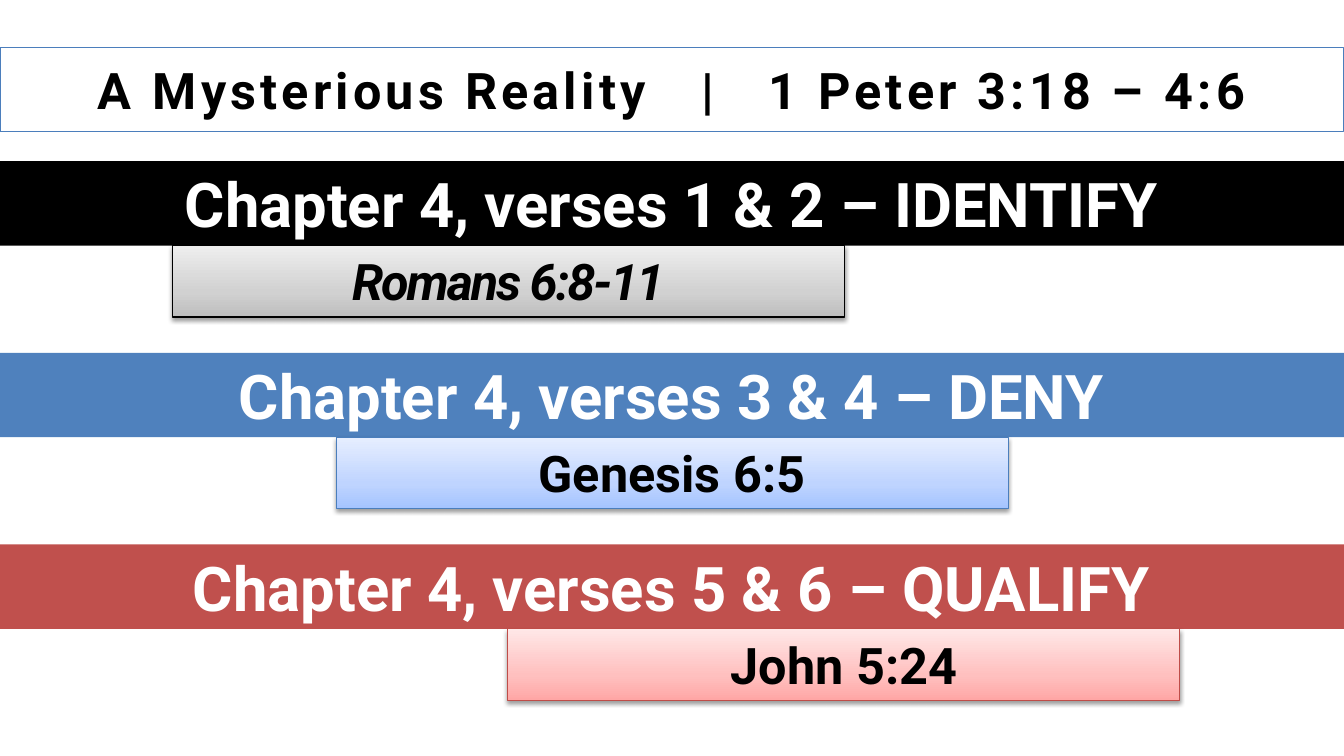
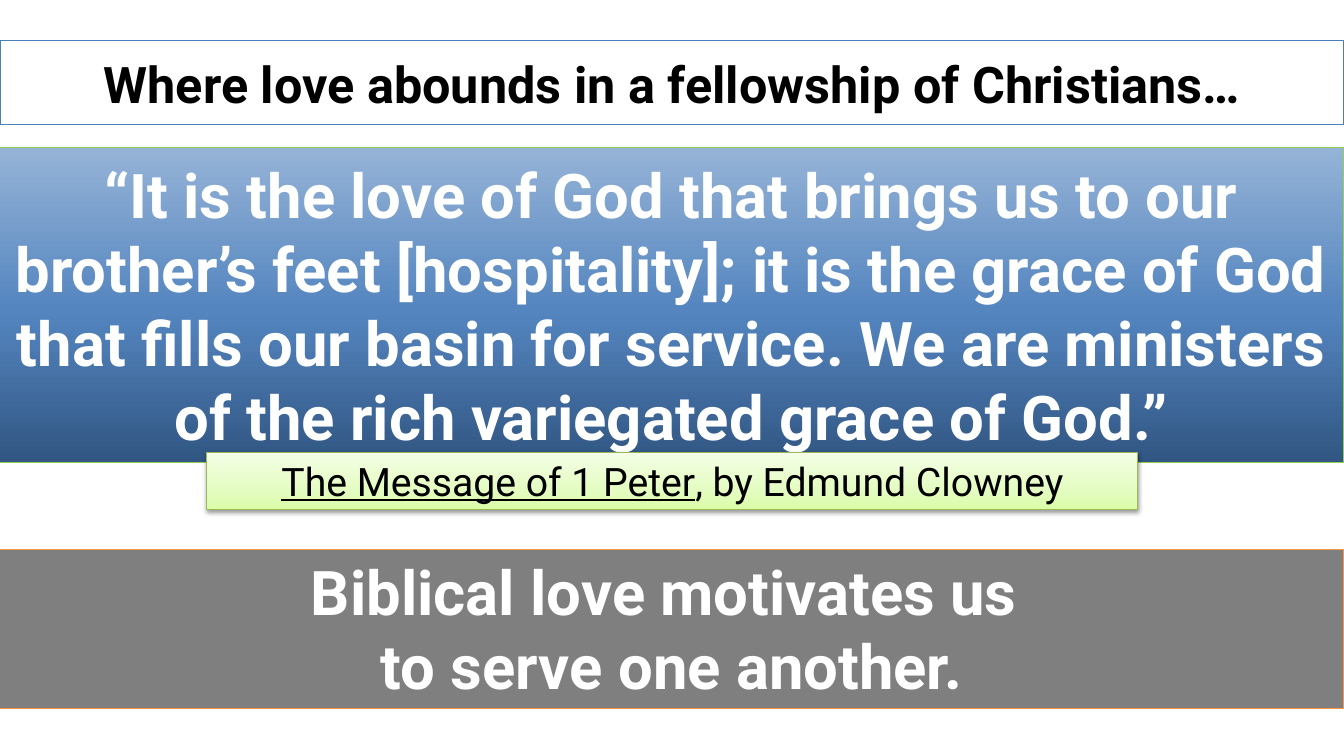
from lxml import etree
from pptx import Presentation
from pptx import util as u
from pptx.dml.color import RGBColor
from pptx.enum import shapes, text
from pptx.oxml import ns

COLORS = {
    "black": "000000", "white": "FFFFFF", "blue": "4F81BD", "red": "C0504D",
    "blue line": "4B7EBC", "red line": "BF4C48", "green line": "98B955",
    "lime": "92D050", "orange": "F79646",
}
GRADIENTS = {
    "gray": [(0, "BDBDBD"), (35, "D1D1D1"), (100, "EEEEEE")],
    "pale blue": [(0, "A4C4FF"), (35, "BFD4FF"), (100, "E6EEFF")],
    "pink": [(0, "FFA6A5"), (35, "FFC0BF"), (100, "FFE7E7")],
    "pale green": [(0, "DAFDA7"), (35, "E4FCC2"), (100, "F5FFE7")],
    "deep blue": [(0, "315683"), (48, "5485BF"), (100, "95B3D7")],
}
TITLE = {"size": u.Pt(36), "bold": True, "color": "black"}
BAND = {"size": u.Pt(44), "bold": True, "color": "white"}
CITATION = {"size": u.Pt(28), "color": "black"}
FULL_WIDTH = 33.87
LINE_HEIGHT = 1.8


def style_box(shape, box, fill, line=None, shadow=False, alpha=None):
    shape.left, shape.top, shape.width, shape.height = [u.Cm(value) for value in box]
    properties = shape.element.spPr
    if fill in GRADIENTS:
        shape.fill.gradient()
        shape.fill.gradient_angle = 90
        stops = properties.find(".//" + ns.qn("a:gsLst"))
        for stop in list(stops):
            stops.remove(stop)
        for position, color in GRADIENTS[fill]:
            stop = etree.SubElement(stops, ns.qn("a:gs"), pos=str(position * 1000))
            etree.SubElement(stop, ns.qn("a:srgbClr"), val=color)
    else:
        shape.fill.solid()
        shape.fill.fore_color.rgb = RGBColor.from_string(COLORS[fill])
    if alpha:
        color = properties.find(ns.qn("a:solidFill"))[0]
        etree.SubElement(color, ns.qn("a:alpha"), val=str(alpha * 1000))
    if line:
        shape.line.color.rgb = RGBColor.from_string(COLORS[line])
        shape.line.width = u.Pt(0.75)
    else:
        shape.line.fill.background()
    shape.shadow.inherit = False
    if shadow:
        outer = etree.SubElement(
            properties.find(ns.qn("a:effectLst")), ns.qn("a:outerShdw"),
            blurRad="40000", dist="20000", dir="5400000", rotWithShape="0")
        color = etree.SubElement(outer, ns.qn("a:srgbClr"), val=COLORS["black"])
        etree.SubElement(color, ns.qn("a:alpha"), val="38000")


def write_text(shape, pieces, style, middle=True, grow=True):
    frame = shape.text_frame
    frame.word_wrap = True
    frame.vertical_anchor = text.MSO_ANCHOR.MIDDLE if middle else text.MSO_ANCHOR.TOP
    frame.auto_size = text.MSO_AUTO_SIZE.SHAPE_TO_FIT_TEXT if grow else text.MSO_AUTO_SIZE.NONE
    paragraph = frame.paragraphs[0]
    paragraph.alignment = text.PP_ALIGN.CENTER
    for words, changes in pieces:
        if words == "\v":
            paragraph.add_line_break()
            continue
        run = paragraph.add_run()
        run.text = words
        values = {"name": "Roboto", **style, **changes}
        run.font.color.rgb = RGBColor.from_string(COLORS[values.pop("color")])
        spacing = values.pop("spacing", None)
        if spacing:
            run.font._element.set("spc", str(int(spacing * 100)))
        for name, value in values.items():
            setattr(run.font, name, value)


presentation = Presentation()
presentation.slide_width = u.Cm(FULL_WIDTH)
presentation.slide_height = u.Cm(19.05)

wide, gap = {"spacing": 3}, {"spacing": 27}
titles = [
    (1.35, [("A Mysterious Reality", wide), (" ", gap), ("|", wide), (" ", gap),
            ("1 Peter 3:18 – 4:6", wide)]),
    (1.19, [("Where love abounds in a fellowship of Christians…", {})]),
]
slides = []
for top, pieces in titles:
    slide = presentation.slides.add_slide(presentation.slide_layouts[5])
    title = slide.shapes.title
    style_box(title, (0, top, FULL_WIDTH, LINE_HEIGHT), "white", "blue line")
    write_text(title, pieces, TITLE)
    slides.append(slide)
outline, quotation = slides

chapters = [
    ("Chapter 4, verses 1 & 2 – IDENTIFY", "black",
     "Romans 6:8-11", 4.34, "gray", "black", {"italic": True, "spacing": -1.5}),
    ("Chapter 4, verses 3 & 4 – DENY", "blue",
     "Genesis 6:5", 8.47, "pale blue", "blue line", {}),
    ("Chapter 4, verses 5 & 6 – QUALIFY", "red",
     "John 5:24", 12.8, "pink", "red line", {}),
]
band_height = 2.13
for index, (heading, color, reference, left, fill, line, changes) in enumerate(chapters):
    top = 4.06 + index * 4.83
    band = outline.shapes.add_shape(shapes.MSO_SHAPE.RECTANGLE, 0, 0, 0, 0)
    style_box(band, (0, top, FULL_WIDTH, band_height), color)
    write_text(band, [(heading, {})], BAND)
    tab = outline.shapes.add_shape(shapes.MSO_SHAPE.RECTANGLE, 0, 0, 0, 0)
    style_box(tab, (left, top + band_height, FULL_WIDTH / 2, LINE_HEIGHT), fill, line, shadow=True)
    write_text(tab, [(reference, changes)], TITLE, middle=False)

quote = quotation.shapes.add_shape(shapes.MSO_SHAPE.RECTANGLE, 0, 0, 0, 0)
style_box(quote, (0, 3.71, FULL_WIDTH, 7.95), "deep blue", "lime")
write_text(quote, [(
    "“It is the love of God that brings us to our brother’s feet [hospitality]; "
    "it is the grace of God that fills our basin for service. "
    "We are ministers of the rich variegated grace of God.”", {})], BAND, grow=False)

citation = quotation.shapes.add_shape(shapes.MSO_SHAPE.RECTANGLE, 0, 0, 0, 0)
style_box(citation, (5.21, 11.4, 23.47, 1.45), "pale green", "green line", shadow=True)
write_text(citation, [("The Message of 1 Peter", {"underline": True}),
                      (", by Edmund Clowney", {})], CITATION, middle=False)

conclusion = quotation.shapes.add_shape(shapes.MSO_SHAPE.RECTANGLE, 0, 0, 0, 0)
style_box(conclusion, (0, 13.84, FULL_WIDTH, 4.01), "black", "orange", alpha=50)
write_text(conclusion, [("Biblical love motivates us ", {}), ("\v", {}),
                        ("to serve one another.", {})], BAND, middle=False)

presentation.save("out.pptx")
